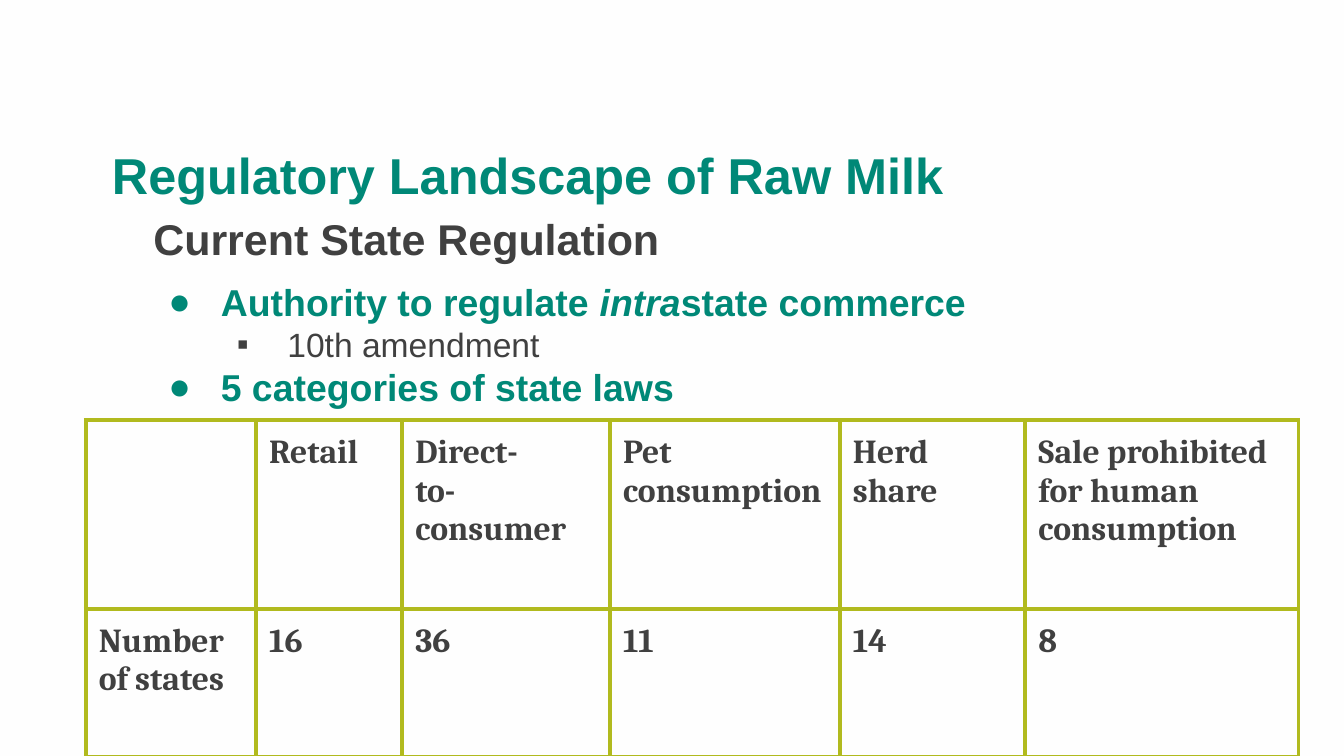
"""Build the raw milk regulation slide."""
from dataclasses import dataclass

from pptx import Presentation, util as u
from pptx.dml.color import RGBColor
from pptx.enum import text
from pptx.oxml import parse_xml
from pptx.oxml.ns import nsdecls


@dataclass(frozen=True)
class Theme:
    """Colours, fonts and type sizes of the slide."""
    paper: str = "FEFEFE"
    teal: str = "008877"
    ink: str = "404040"
    rule: str = "B1BA1E"
    sans: str = "Arial"
    serif: str = "Cambria"
    title: float = 36
    heading: float = 30.7
    point: float = 26.7
    detail: float = 24
    border: float = 3


def assign(target, values):
    """Set each named attribute on the target."""
    for name, value in values.items():
        setattr(target, name, value)


class Composer:
    """Draws styled elements on the current page."""

    def __init__(self, theme, page):
        """Keep the theme and page, and paint the background."""
        self.theme = theme
        self.page = page
        fill = page.background.fill
        fill.solid()
        fill.fore_color.rgb = RGBColor.from_string(theme.paper)

    def span(self, para, words, colour, **font):
        """Add a run with its font settings."""
        run = para.add_run()
        run.text = words
        assign(run.font, font)
        run.font.color.rgb = RGBColor.from_string(colour)

    def bullet(self, para, symbol, colour, margin, hanging):
        """Give a paragraph a coloured bullet and a hanging indent."""
        props = para._p.get_or_add_pPr()
        props.set("marL", str(u.Inches(margin)))
        props.set("indent", str(-u.Inches(hanging)))
        for tag in (f'<a:buClr {nsdecls("a")}><a:srgbClr val="{colour}"/></a:buClr>',
                    f'<a:buFont {nsdecls("a")} typeface="{self.theme.sans}"/>',
                    f'<a:buChar {nsdecls("a")} char="{symbol}"/>'):
            props.append(parse_xml(tag))

    def box(self, left, top, width, height, inset):
        """Add a wrapping text box and return its frame."""
        area = [u.Inches(size) for size in (left, top, width, height)]
        frame = self.page.shapes.add_textbox(*area).text_frame
        assign(frame, {"word_wrap": True, "margin_left": 0, "margin_right": 0,
                       "margin_top": u.Inches(inset), "margin_bottom": 0,
                       "vertical_anchor": text.MSO_ANCHOR.TOP})
        return frame

    def title(self, words):
        """Add the slide title."""
        frame = self.box(1.11, 1.38, 12.42, 1.04, 0.05)
        self.span(frame.paragraphs[0], words, self.theme.teal, name=self.theme.sans,
                  size=u.Pt(self.theme.title), bold=True)

    def outline(self, heading, points):
        """Add a heading followed by bulleted points at two levels."""
        theme = self.theme
        levels = [("●", theme.teal, 0.67, 0.52, theme.point),
                  ("▪", theme.ink, 1.33, 0.5, theme.detail)]
        frame = self.box(1.52, 2.08, 12.42, 2.68, 0.03)
        self.span(frame.paragraphs[0], heading, theme.ink, name=theme.sans,
                  size=u.Pt(theme.heading), bold=True)
        for index, (level, spans) in enumerate(points):
            symbol, colour, margin, hanging, size = levels[level]
            para = frame.add_paragraph()
            para.level = level
            para.space_before = u.Pt(0 if index else 10.7)
            self.bullet(para, symbol, colour, margin, hanging)
            for words, italic in spans:
                self.span(para, words, colour, name=theme.sans, size=u.Pt(size),
                          bold=level == 0, italic=italic)

    def cell(self, cell, words):
        """Fill and border one table cell."""
        theme = self.theme
        sides = ("left", "right", "top", "bottom")
        assign(cell, {f"margin_{side}": u.Inches(0.13) for side in sides})
        for side in sides:
            cell._tc.get_or_add_tcPr().append(parse_xml(
                f'<a:ln{side[0].upper()} {nsdecls("a")} w="{u.Pt(theme.border)}">'
                f'<a:solidFill><a:srgbClr val="{theme.rule}"/></a:solidFill>'
                f'</a:ln{side[0].upper()}>'))
        cell.fill.background()
        for index, line in enumerate(words.split("\n")):
            frame = cell.text_frame
            para = frame.add_paragraph() if index else frame.paragraphs[0]
            if line:
                self.span(para, line, theme.ink, name=theme.serif,
                          size=u.Pt(theme.detail), bold=True)

    def table(self, left, top, widths, heights, rows):
        """Add a table with the given column widths and row heights."""
        area = [u.Inches(size) for size in (left, top, sum(widths), sum(heights))]
        grid = self.page.shapes.add_table(len(rows), len(widths), *area).table
        assign(grid, {"first_row": False, "horz_banding": False})
        for column, width in zip(grid.columns, widths):
            column.width = u.Inches(width)
        for row, height, entries in zip(grid.rows, heights, rows):
            row.height = u.Inches(height)
            for cell, words in zip(row.cells, entries):
                self.cell(cell, words)


def main():
    """Compose and save the deck."""
    deck = Presentation()
    assign(deck, {"slide_width": u.Inches(13.33), "slide_height": u.Inches(7.5)})
    composer = Composer(Theme(), deck.slides.add_slide(deck.slide_layouts[6]))
    composer.title("Regulatory Landscape of Raw Milk")
    composer.outline("Current State Regulation", [
        (0, [("Authority to regulate ", False), ("intra", True),
             ("state commerce", False)]),
        (1, [("10th amendment", False)]),
        (0, [("5 categories of state laws", False)]),
    ])
    composer.table(0.85, 4.17, [1.69, 1.45, 2.06, 2.28, 1.84, 2.71], [1.87, 1.47], [
        ["", "Retail", "Direct-\nto-consumer", "Pet consumption", "Herd share",
         "Sale prohibited for human consumption"],
        ["Number of states", "16", "36", "11", "14", "8"],
    ])
    deck.save("out.pptx")


if __name__ == "__main__":
    main()
